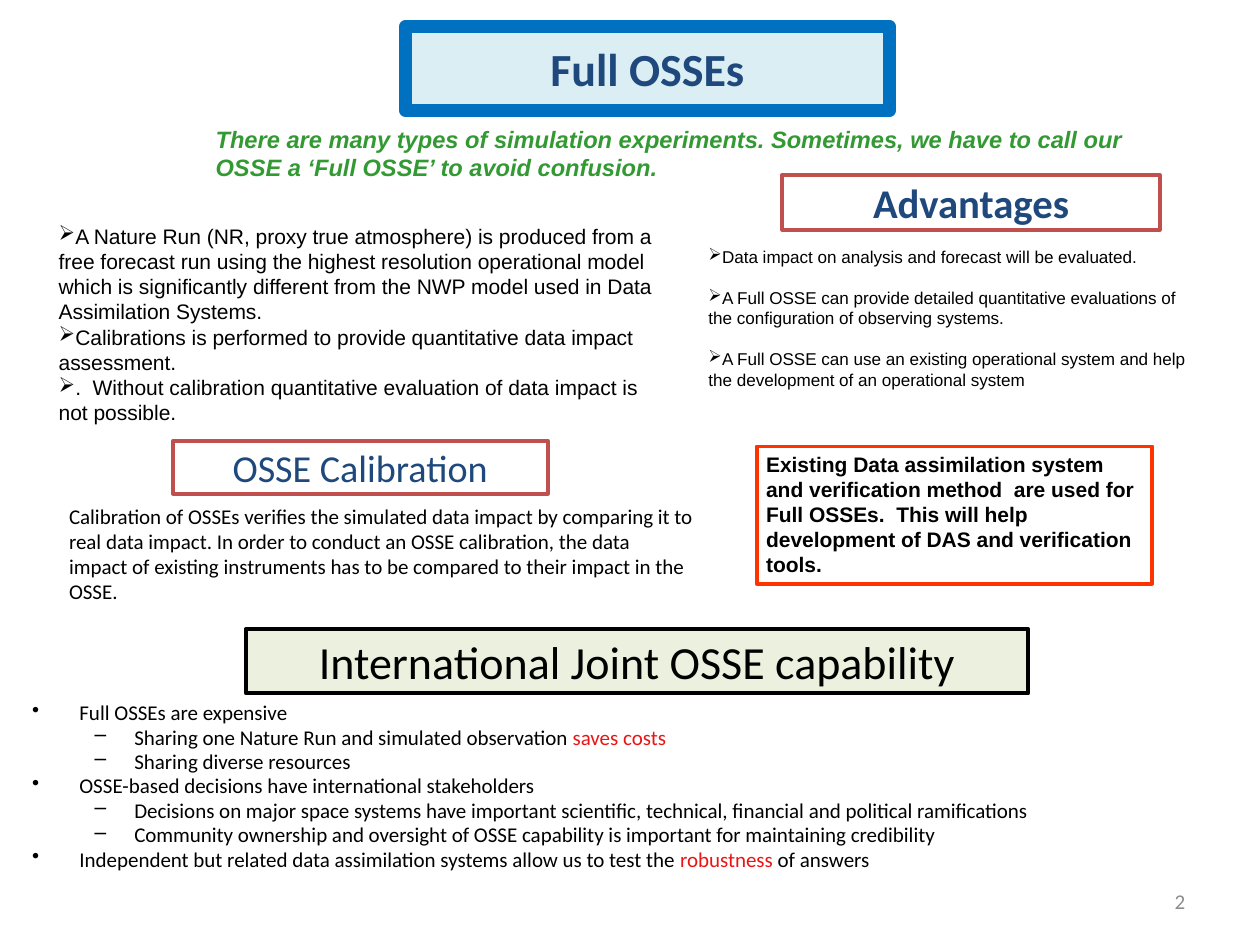
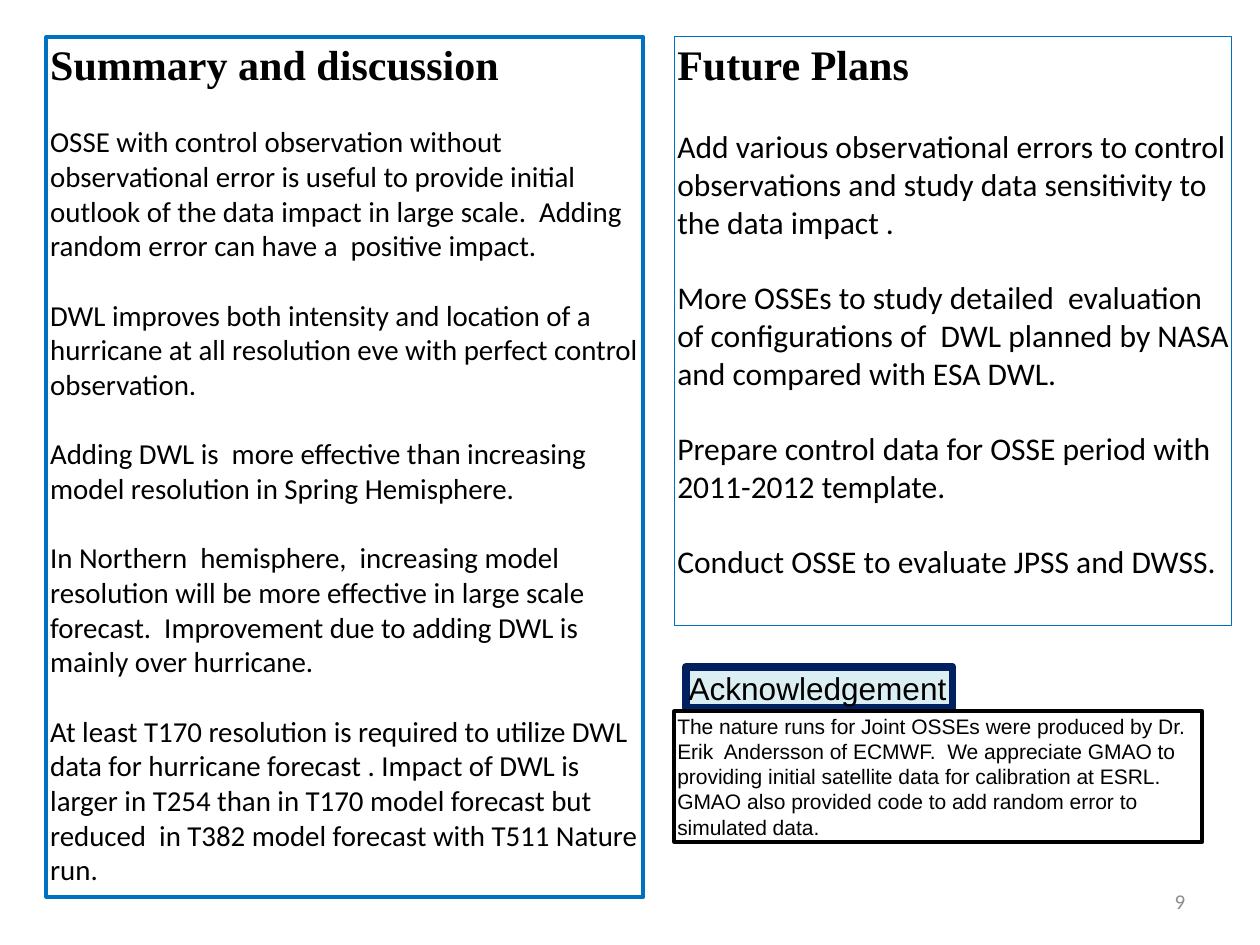
from lxml import etree
from pptx import Presentation
from pptx.dml.color import RGBColor
from pptx.enum.shapes import MSO_SHAPE
from pptx.enum.text import MSO_ANCHOR, PP_ALIGN
from pptx.oxml.ns import qn
from pptx.util import Inches, Pt

RECTANGLE = MSO_SHAPE.RECTANGLE
TOP, MIDDLE = MSO_ANCHOR.TOP, MSO_ANCHOR.MIDDLE
LEFT, CENTER, RIGHT = PP_ALIGN.LEFT, PP_ALIGN.CENTER, PP_ALIGN.RIGHT

BLACK = RGBColor(0x00, 0x00, 0x00)
GRAY = RGBColor(0x8C, 0x8C, 0x8C)
NAVY = RGBColor(0x1F, 0x49, 0x7D)
DARK_BLUE = RGBColor(0x00, 0x20, 0x60)
BLUE = RGBColor(0x00, 0x70, 0xC0)
PALE_BLUE = RGBColor(0xDB, 0xEE, 0xF4)
PALE_GREEN = RGBColor(0xEB, 0xF1, 0xDE)
GREEN = RGBColor(0x33, 0x99, 0x33)
BRICK = RGBColor(0xC0, 0x50, 0x4D)
ORANGE = RGBColor(0xFF, 0x33, 0x00)
RED = RGBColor(0xEA, 0x14, 0x14)

SANS, BODY, SERIF = "Arial", "Calibri", "Times New Roman"
TIGHT, NORMAL, MEDIUM, WIDE = (0.03, 0.02), (0.1, 0.05), (0.11, 0.06), (0.13, 0.07)


class Deck:
    """Holds the presentation, its style and the current slide."""

    def __init__(self):
        self.presentation = Presentation()
        self.presentation.slide_width = Inches(13.32)
        self.presentation.slide_height = Inches(9.99)
        self.slide = None

    def new_slide(self, number):
        layout = self.presentation.slide_layouts[6]
        self.slide = self.presentation.slides.add_slide(layout)
        self.text((9.55, 9.26, 3.11, 0.53), [str(number)], 16, color=GRAY,
                  margins=WIDE, anchor=MIDDLE, align=RIGHT)

    def style(self, paragraph, size, font=BODY, color=BLACK, bold=False,
              italic=False, align=LEFT):
        paragraph.alignment = align
        paragraph.font.size = Pt(size)
        paragraph.font.name = font
        paragraph.font.bold = bold
        paragraph.font.italic = italic
        paragraph.font.color.rgb = color

    def bullet(self, paragraph, char, margin=0.0, hanging=0.0):
        properties = paragraph._p.get_or_add_pPr()
        properties.set("marL", str(Inches(margin)))
        properties.set("indent", str(Inches(-hanging)))
        etree.SubElement(properties, qn("a:buChar")).set("char", char)

    def frame(self, shape, margins, anchor=TOP, wrap=True):
        """Prepare the shape's text frame and return it."""
        frame = shape.text_frame
        frame.word_wrap = wrap
        frame.vertical_anchor = anchor
        frame.margin_left = frame.margin_right = Inches(margins[0])
        frame.margin_top = frame.margin_bottom = Inches(margins[1])
        return frame

    def paragraphs(self, frame, count):
        return [frame.paragraphs[0]] + [frame.add_paragraph() for _ in range(count - 1)]

    def rectangle(self, at, line, width, fill=None):
        shape = self.slide.shapes.add_shape(RECTANGLE, *map(Inches, at))
        shape.shadow.inherit = False
        if fill is None:
            shape.fill.background()
        else:
            shape.fill.solid()
            shape.fill.fore_color.rgb = fill
        shape.line.color.rgb = line
        shape.line.width = Pt(width)
        return shape

    def add_texts(self, frame, texts, size, bullet=None, gap=0, **style):
        for index, paragraph in enumerate(self.paragraphs(frame, len(texts))):
            paragraph.add_run().text = texts[index]
            if index and gap:
                paragraph.space_before = Pt(gap)
            if bullet:
                self.bullet(paragraph, bullet)
            self.style(paragraph, size, **style)

    def text(self, at, texts, size, margins=MEDIUM, anchor=TOP, **style):
        box = self.slide.shapes.add_textbox(*map(Inches, at))
        self.add_texts(self.frame(box, margins, anchor), texts, size, **style)

    def boxed(self, at, text, size, line, width=3, fill=None, margins=TIGHT,
              anchor=TOP, wrap=True, **style):
        """Text in an outlined rectangle."""
        shape = self.rectangle(at, line, width, fill)
        self.add_texts(self.frame(shape, margins, anchor, wrap), [text], size, **style)

    def heading(self, at, text, size, line, color=NAVY, margins=MEDIUM, **options):
        self.boxed(at, text, size, line, color=color, margins=margins,
                   anchor=MIDDLE, align=CENTER, **options)

    def panel(self, at, title, texts, size, gap, width, margins):
        """Outlined column with a serif title over spaced paragraphs."""
        frame = self.frame(self.rectangle(at, BLUE, width), margins)
        title_line, *rest = self.paragraphs(frame, len(texts) + 1)
        title_line.add_run().text = title
        self.style(title_line, 32, font=SERIF, bold=True)
        for paragraph, text in zip(rest, texts):
            paragraph.add_run().text = text
            paragraph.space_before = Pt(gap)
            self.style(paragraph, size)

    def outline(self, at, items, size):
        """Two-level list; each item is a level and (text, highlighted) parts."""
        frame = self.frame(self.slide.shapes.add_textbox(*map(Inches, at)), WIDE)
        levels = [("•", 0.5, 0.5), ("–", 1.08, 0.42)]
        for index, paragraph in enumerate(self.paragraphs(frame, len(items))):
            level, *parts = items[index]
            paragraph.level = level
            paragraph.line_spacing = 0.8
            if index:
                paragraph.space_before = Pt(size * 0.2)
            self.bullet(paragraph, *levels[level])
            self.style(paragraph, size)
            for text, highlighted in parts:
                run = paragraph.add_run()
                run.text = text
                if highlighted:
                    run.font.color.rgb = RED


def build_full_osses(deck):
    deck.new_slide(2)
    deck.text((7.38, 2.54, 5.41, 2.08), [
        "Data impact on analysis and forecast will be evaluated.",
        "A Full OSSE can provide detailed quantitative evaluations of the "
        "configuration of observing systems.",
        "A Full OSSE can use an existing operational system and help the "
        "development of an operational system",
    ], 13, font=SANS, bullet="➢", gap=15.6)
    deck.heading((8.27, 1.85, 3.99, 0.58), "Advantages", 31, BRICK, bold=True)
    deck.boxed((8, 4.72, 4.18, 1.45),
               "Existing Data assimilation system and verification method  are used "
               "for Full OSSEs.  This will help development of DAS and verification "
               "tools.", 16, ORANGE, margins=NORMAL, font=SANS, bold=True)
    deck.heading((1.83, 4.66, 3.96, 0.56), "OSSE Calibration", 29, BRICK)
    deck.text((0.51, 2.3, 6.55, 2.26), [
        "A Nature Run (NR, proxy true atmosphere) is produced from a free forecast "
        "run using the highest resolution operational model  which is significantly "
        "different from the NWP model used in Data Assimilation Systems.",
        "Calibrations is performed to provide quantitative data impact assessment.",
        ".  Without calibration quantitative evaluation of data impact is not possible.",
    ], 16, font=SANS, bullet="➢")
    deck.heading((4.29, 0.28, 5.11, 0.89), "Full OSSEs", 35, BLUE, width=10,
                 fill=PALE_BLUE, bold=True)
    deck.text((2.17, 1.26, 10.04, 0.72), [
        "There are many types of simulation experiments. Sometimes, we have to call "
        "our OSSE a ‘Full OSSE’ to avoid confusion.",
    ], 18, font=SANS, color=GREEN, bold=True, italic=True)
    deck.outline((0.21, 7.38, 13.27, 2.37), [
        (0, ("Full OSSEs are expensive", False)),
        (1, ("Sharing one Nature Run and simulated observation ", False),
         ("saves costs", True)),
        (1, ("Sharing diverse resources", False)),
        (0, ("OSSE-based decisions have international stakeholders", False)),
        (1, ("Decisions on major space systems have important scientific, technical, "
             "financial and political ramifications", False)),
        (1, ("Community ownership and oversight of OSSE capability is important for "
             "maintaining credibility", False)),
        (0, ("Independent but related data assimilation systems allow us to test the ",
             False), ("robustness ", True), ("of answers", False)),
    ], 16)
    deck.heading((2.6, 6.65, 8.27, 0.68), "International Joint OSSE capability", 35,
                 BLACK, color=BLACK, fill=PALE_GREEN, margins=WIDE)
    deck.text((0.7, 5.3, 6.66, 1.11), [
        "Calibration of OSSEs verifies the simulated data impact by comparing it to "
        "real data impact. In order to conduct an OSSE calibration, the data impact "
        "of existing instruments has to be compared to their impact in the OSSE.",
    ], 16, margins=TIGHT)


def build_summary(deck):
    deck.new_slide(9)
    deck.panel((0.49, 0.39, 6.31, 9.09), "Summary and discussion", [
        "OSSE with control observation without observational error is useful to "
        "provide initial outlook of the data impact in large scale.  Adding random "
        "error can have a  positive impact.",
        "DWL improves both intensity and location of a hurricane at all resolution "
        "eve with perfect control observation.",
        "Adding DWL is  more effective than increasing model resolution in Spring "
        "Hemisphere.",
        "In Northern  hemisphere,  increasing model resolution will be more effective "
        "in large scale forecast.  Improvement due to adding DWL is mainly over "
        "hurricane.",
        "At least T170 resolution is required to utilize DWL data for hurricane "
        "forecast . Impact of DWL is larger in T254 than in T170 model forecast but "
        "reduced  in T382 model forecast with T511 Nature run.",
    ], 22, gap=26.4, width=3, margins=(0.04, 0.02))
    deck.boxed((7.25, 7.05, 2.82, 0.44), "Acknowledgement", 24, DARK_BLUE, width=6,
               fill=PALE_BLUE, wrap=False, font=SANS)
    deck.boxed((7.13, 7.52, 5.58, 1.38),
               "The nature runs for Joint OSSEs were produced by Dr. Erik  Andersson of "
               "ECMWF.  We appreciate GMAO to providing initial satellite data for "
               "calibration at ESRL.   GMAO also provided code to add random error to "
               "simulated data.", 16, BLACK, font=SANS)
    deck.panel((7.13, 0.39, 5.89, 6.22), "Future Plans", [
        "Add various observational errors to control observations and study data "
        "sensitivity to the data impact .",
        "More OSSEs to study detailed  evaluation of configurations of  DWL planned "
        "by NASA and compared with ESA DWL.",
        "Prepare control data for OSSE period with 2011-2012 template.",
        "Conduct OSSE to evaluate JPSS and DWSS.",
    ], 24, gap=28.6, width=0.75, margins=TIGHT)


def main():
    deck = Deck()
    build_full_osses(deck)
    build_summary(deck)
    deck.presentation.save("out.pptx")


if __name__ == "__main__":
    main()
